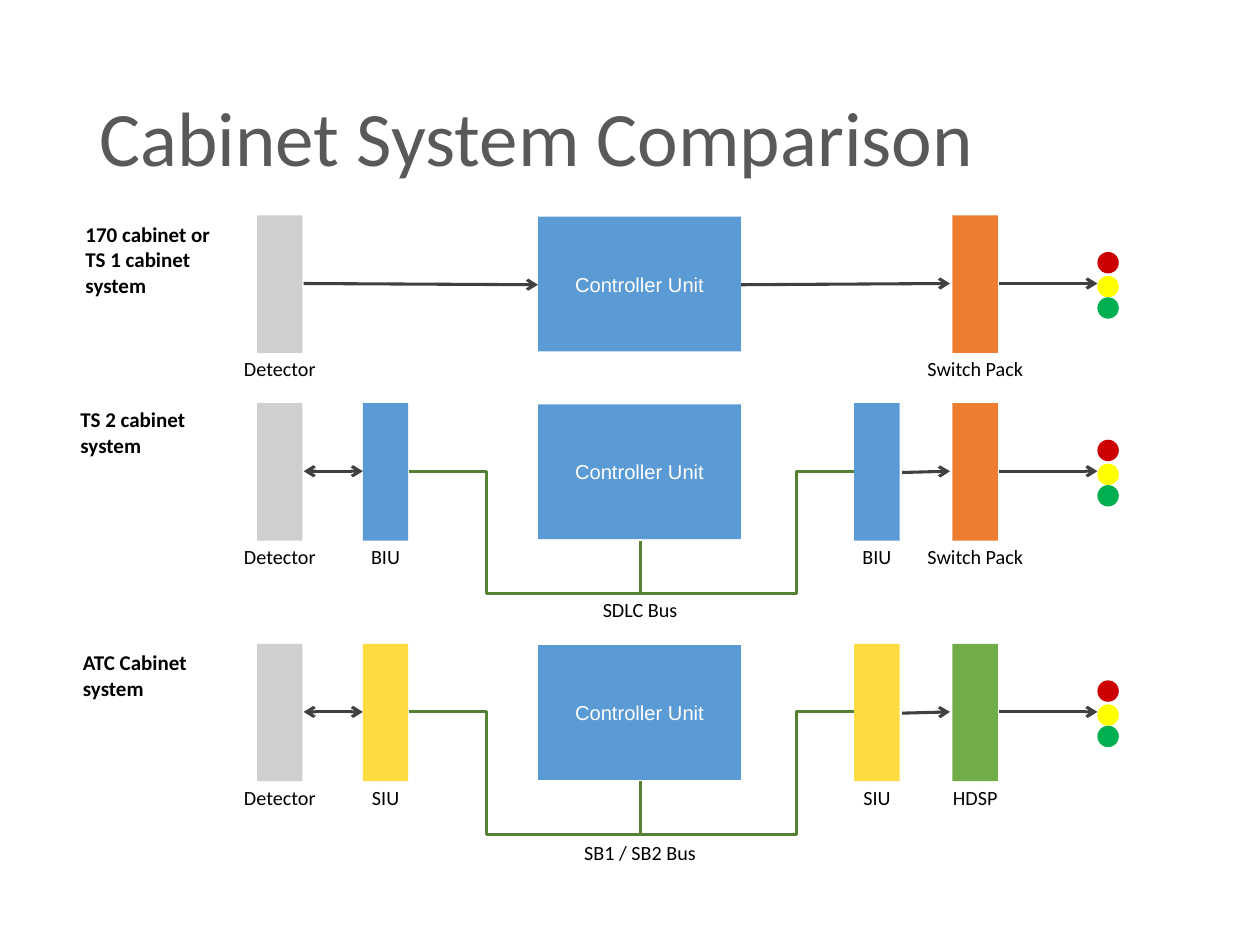
from lxml.etree import SubElement
from pptx import Presentation
from pptx.dml.color import RGBColor
from pptx.enum.shapes import MSO_CONNECTOR, MSO_SHAPE
from pptx.enum.text import MSO_ANCHOR, MSO_AUTO_SIZE, PP_ALIGN
from pptx.oxml.ns import qn
from pptx.util import Inches, Pt

COLORS = {
    "title": "595959", "black": "000000", "white": "FFFFFF",
    "arrow": "404040", "bus": "548235",
    "gray": "D0CECE", "blue": "5B9BD5", "orange": "ED7D31",
    "yellow": "FCDC41", "green": "70AD47",
    "stop": "CC0000", "caution": "FFFF00", "go": "00B050",
}
LABEL_WIDTHS = {"Detector": 0.79, "BIU": 0.46, "SIU": 0.42, "Switch Pack": 1.08,
                "HDSP": 0.63, "SDLC Bus": 0.92, "SB1 / SB2 Bus": 1.23}
BLOCK_WIDTH, BLOCK_HEIGHT = 0.36, 1.09
BUS_CENTER = 5.08

prs = Presentation()
prs.slide_width, prs.slide_height = Inches(10), Inches(7.5)
slide = prs.slides.add_slide(prs.slide_layouts[6])


def add_text(shapes, box, text, size, color="black", bold=False, centered=True,
             wrap=False, fit=True):
    textbox = shapes.add_textbox(*map(Inches, box))
    frame = textbox.text_frame
    frame.word_wrap = wrap
    frame.auto_size = MSO_AUTO_SIZE.SHAPE_TO_FIT_TEXT if fit else MSO_AUTO_SIZE.NONE
    paragraph = frame.paragraphs[0]
    paragraph.alignment = PP_ALIGN.CENTER if centered else PP_ALIGN.LEFT
    run = paragraph.add_run()
    run.text = text
    run.font.name, run.font.size, run.font.bold = "Calibri", Pt(size), bold
    run.font.color.rgb = RGBColor.from_string(COLORS[color])
    return frame


def add_link(start, end, color="arrow", ends=(), bend=None):
    kind = MSO_CONNECTOR.ELBOW if bend else MSO_CONNECTOR.STRAIGHT
    link = slide.shapes.add_connector(kind, *map(Inches, (*start, *end)))
    link.line.color.rgb = RGBColor.from_string(COLORS[color])
    link.line.width = Pt(1.75)
    properties = link._element.spPr
    for tag in ends:
        SubElement(properties.find(qn("a:ln")), qn(tag), type="arrow")
    if bend:
        guides = properties.find(qn("a:prstGeom")).find(qn("a:avLst"))
        SubElement(guides, qn("a:gd"), name="adj1", fmla=f"val {round(bend * 100000)}")
    SubElement(properties, qn("a:effectLst"))


title = add_text(slide.shapes, (0.69, 0.4, 8.62, 1.45), "Cabinet System Comparison",
                 44, "title", centered=False, wrap=True, fit=False)
title.vertical_anchor = MSO_ANCHOR.MIDDLE
title.paragraphs[0].line_spacing = 0.9

systems = [
    (1.71, "170 cabinet or TS 1 cabinet system", (0.58, 1.71, 1.32, 0.71),
     None, None, ("Switch Pack", "orange"), None),
    (3.2, "TS 2 cabinet system", (0.54, 3.18, 1.32, 0.5),
     "BIU", "blue", ("Switch Pack", "orange"), ("SDLC Bus", 4.69)),
    (5.11, "ATC Cabinet system", (0.56, 5.11, 1.32, 0.5),
     "SIU", "yellow", ("HDSP", "green"), ("SB1 / SB2 Bus", 6.62)),
]

for top, system, system_box, interface, interface_color, output, bus in systems:
    middle, bus_y = top + 0.54, top + 1.51
    blocks = [(2.04, "Detector", "gray"), (7.56, *output)]

    add_link((7.93, middle), (8.71, middle), ends=["a:tailEnd"])
    if bus:
        blocks += [(2.88, interface, interface_color), (6.78, interface, interface_color)]
        add_link((2.41, middle), (2.88, middle), ends=["a:headEnd", "a:tailEnd"])
        add_link((7.16, middle + 0.01), (7.54, middle), ends=["a:tailEnd"])
        add_link((3.25, middle), (5.31, bus_y), "bus", bend=0.298)
        add_link((6.78, middle), (5.31, bus_y), "bus", bend=0.312)
        add_link((BUS_CENTER, top + BLOCK_HEIGHT), (BUS_CENTER, bus_y), "bus")
        bus_name, bus_top = bus
        width = LABEL_WIDTHS[bus_name]
        add_text(slide.shapes, (BUS_CENTER - width / 2, bus_top, width, 0.29), bus_name, 11.5)
    else:
        add_link((2.41, middle), (4.27, middle + 0.01), ends=["a:tailEnd"])
        add_link((5.88, middle + 0.01), (7.54, middle), ends=["a:tailEnd"])

    controller = slide.shapes.add_shape(
        MSO_SHAPE.RECTANGLE, Inches(4.27), Inches(top + 0.01), Inches(1.61), Inches(1.07))
    controller.shadow.inherit = False
    controller.fill.solid()
    controller.fill.fore_color.rgb = RGBColor.from_string(COLORS["blue"])
    controller.line.fill.background()
    controller.text_frame.vertical_anchor = MSO_ANCHOR.MIDDLE
    caption = controller.text_frame.paragraphs[0]
    caption.alignment = PP_ALIGN.CENTER
    run = caption.add_run()
    run.text = "Controller Unit"
    run.font.name, run.font.size = "Arial", Pt(11.5)
    run.font.color.rgb = RGBColor.from_string(COLORS["white"])

    for left, label, color in blocks:
        group = slide.shapes.add_group_shape()
        block = group.shapes.add_shape(
            MSO_SHAPE.RECTANGLE, Inches(left), Inches(top),
            Inches(BLOCK_WIDTH), Inches(BLOCK_HEIGHT))
        block.shadow.inherit = False
        block.fill.solid()
        block.fill.fore_color.rgb = RGBColor.from_string(COLORS[color])
        block.line.fill.background()
        width = LABEL_WIDTHS[label]
        label_left = left + (BLOCK_WIDTH - width) / 2
        add_text(group.shapes, (label_left, top + 1.07, width, 0.29), label, 11.5)

    signal = slide.shapes.add_group_shape()
    for offset, color in [(0.29, "stop"), (0.48, "caution"), (0.65, "go")]:
        lamp = signal.shapes.add_shape(
            MSO_SHAPE.OVAL, Inches(8.71), Inches(top + offset), Inches(0.17), Inches(0.17))
        lamp.shadow.inherit = False
        lamp.fill.solid()
        lamp.fill.fore_color.rgb = RGBColor.from_string(COLORS[color])
        lamp.line.fill.background()

    add_text(slide.shapes, system_box, system, 12, bold=True, centered=False, wrap=True)

prs.save("out.pptx")
